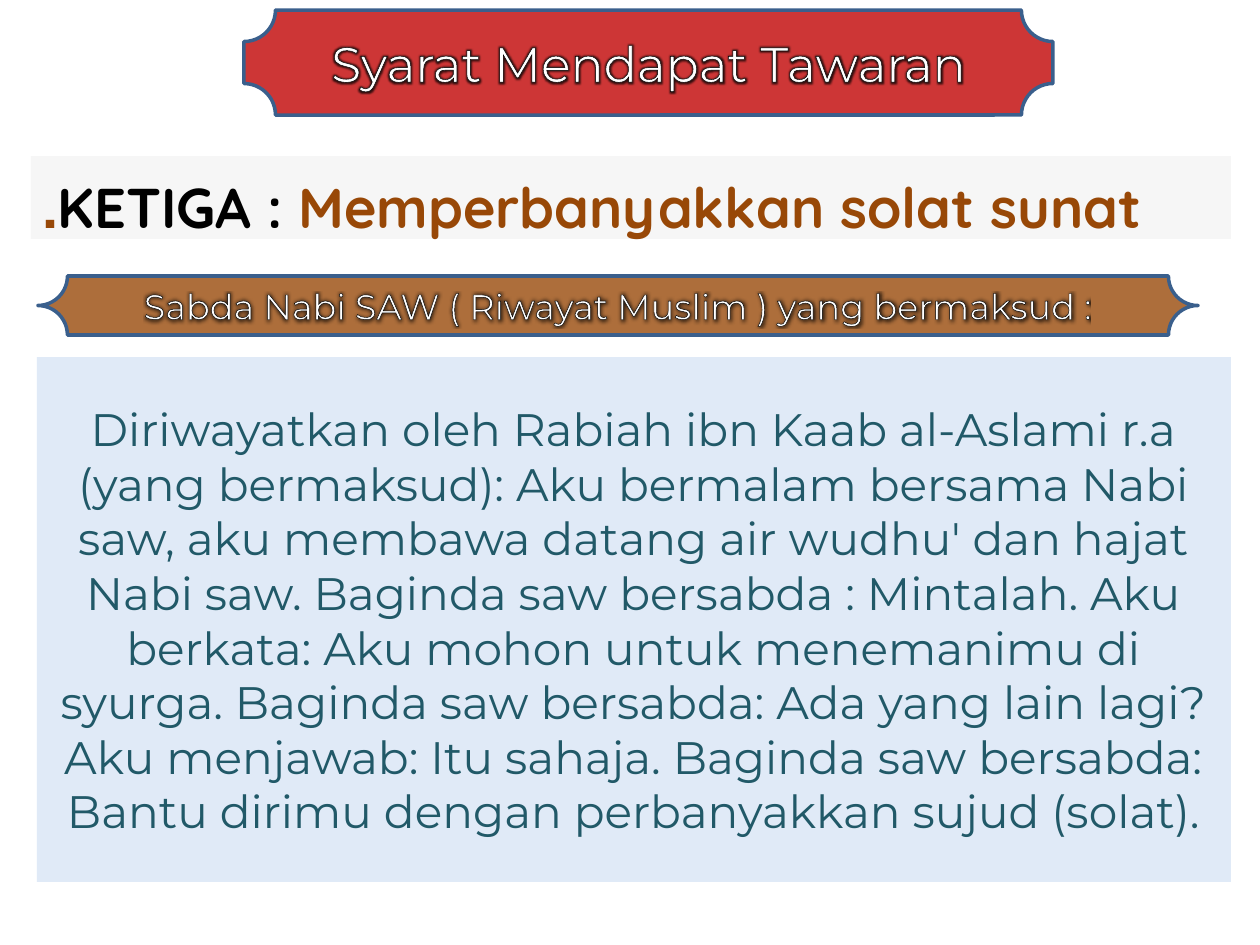
from dataclasses import dataclass

from lxml import etree
from pptx import Presentation
from pptx.dml.color import RGBColor
from pptx.enum.shapes import MSO_SHAPE
from pptx.enum.text import MSO_ANCHOR, MSO_AUTO_SIZE, PP_ALIGN
from pptx.oxml import parse_xml
from pptx.oxml.ns import nsdecls, qn
from pptx.util import Pt

PLAQUE, RECTANGLE = MSO_SHAPE.PLAQUE, MSO_SHAPE.RECTANGLE
TOP, MIDDLE = MSO_ANCHOR.TOP, MSO_ANCHOR.MIDDLE
LEFT, CENTER = PP_ALIGN.LEFT, PP_ALIGN.CENTER
EMU_PER_PX = 914400 / 126


@dataclass(frozen=True)
class Theme:
    red: str = "C00000"
    brown: str = "984807"
    border: str = "3A5F8C"
    grey: str = "F2F2F2"
    pale_blue: str = "C6D9F1"
    teal: str = "215968"
    white: str = "FFFFFF"
    black: str = "000000"
    body_font: str = "Montserrat"
    heading_font: str = "Quicksand"
    title_size: int = 28
    heading_size: int = 32
    source_size: int = 20
    body_size: int = 26


THEME = Theme()


@dataclass(frozen=True)
class Span:
    text: str
    color: str


@dataclass(frozen=True)
class Panel:
    left: int
    top: int
    width: int
    height: int
    fill: str
    opacity: int
    size: int
    spans: tuple[Span, ...]
    font: str = THEME.body_font
    corner: float | None = None


HADITH = (
    "Diriwayatkan oleh Rabiah ibn Kaab al-Aslami r.a (yang bermaksud): "
    "Aku bermalam bersama Nabi saw, aku membawa datang air wudhu' dan hajat "
    "Nabi saw. Baginda saw bersabda : Mintalah. Aku berkata: Aku mohon untuk "
    "menemanimu di syurga. Baginda saw bersabda: Ada yang lain lagi? Aku "
    "menjawab: Itu sahaja. Baginda saw bersabda: Bantu dirimu dengan "
    "perbanyakkan sujud (solat)."
)
TITLE = Panel(244, 10, 809, 105, THEME.red, 79, THEME.title_size,
              (Span("Syarat Mendapat Tawaran", THEME.white),), corner=0.3)
HEADING = Panel(31, 156, 1200, 83, THEME.grey, 69, THEME.heading_size,
                (Span("KETIGA :", THEME.black),
                 Span(" Memperbanyakkan solat sunat.", THEME.brown)),
                font=THEME.heading_font)
SOURCE = Panel(38, 276, 1160, 59, THEME.brown, 79, THEME.source_size,
               (Span("Sabda Nabi SAW ( Riwayat Muslim ) yang bermaksud :", THEME.white),),
               corner=0.5)
QUOTE = Panel(37, 357, 1194, 525, THEME.pale_blue, 53, THEME.body_size,
              (Span(HADITH, THEME.teal),))


def px(length: int) -> int:
    return round(length * EMU_PER_PX)


def add_glowing_outline(span) -> None:
    properties = span.font._element
    outline = parse_xml(
        f'<a:ln {nsdecls("a")} w="9525"><a:solidFill>'
        f'<a:srgbClr val="{THEME.black}"/></a:solidFill></a:ln>')
    glow = parse_xml(
        f'<a:effectLst {nsdecls("a")}><a:glow rad="50800"><a:srgbClr val="{THEME.black}">'
        '<a:alpha val="75000"/></a:srgbClr></a:glow></a:effectLst>')
    properties.insert(0, outline)
    properties.find(qn("a:solidFill")).addnext(glow)


def add_panel(page, panel: Panel):
    kind = RECTANGLE if panel.corner is None else PLAQUE
    box = page.shapes.add_shape(
        kind, px(panel.left), px(panel.top), px(panel.width), px(panel.height))
    box.shadow.inherit = False
    box.fill.solid()
    box.fill.fore_color.rgb = RGBColor.from_string(panel.fill)
    color = box.fill._xPr.find(f'{qn("a:solidFill")}/{qn("a:srgbClr")}')
    etree.SubElement(color, qn("a:alpha"), val=str(panel.opacity * 1000))
    if panel.corner is None:
        box.line.fill.background()
    else:
        box.adjustments[0] = panel.corner
        box.line.color.rgb = RGBColor.from_string(THEME.border)
        box.line.width = Pt(2)
    frame = box.text_frame
    frame.word_wrap = True
    frame.vertical_anchor = MIDDLE
    para = frame.paragraphs[0]
    para.alignment = CENTER
    for part in panel.spans:
        span = para.add_run()
        span.text = part.text
        span.font.name = panel.font
        span.font.size = Pt(panel.size)
        span.font.color.rgb = RGBColor.from_string(part.color)
        if panel.corner is not None:
            add_glowing_outline(span)
    return box


def add_heading(page, panel: Panel) -> None:
    frame = add_panel(page, panel).text_frame
    frame.vertical_anchor = TOP
    frame.auto_size = MSO_AUTO_SIZE.SHAPE_TO_FIT_TEXT
    para = frame.paragraphs[0]
    para.alignment = LEFT
    para.line_spacing = 1.15
    para.space_after = Pt(8)
    para._p.get_or_add_pPr().set("rtl", "1")
    for span in para.runs:
        span.font.bold = True


def main() -> None:
    """Build the slide on the conditions of the offer."""
    deck = Presentation()
    deck.slide_width, deck.slide_height = px(1260), px(945)
    page = deck.slides.add_slide(deck.slide_layouts[6])
    add_panel(page, TITLE)
    add_heading(page, HEADING)
    add_panel(page, SOURCE)
    add_panel(page, QUOTE)
    deck.save("out.pptx")


if __name__ == "__main__":
    main()
